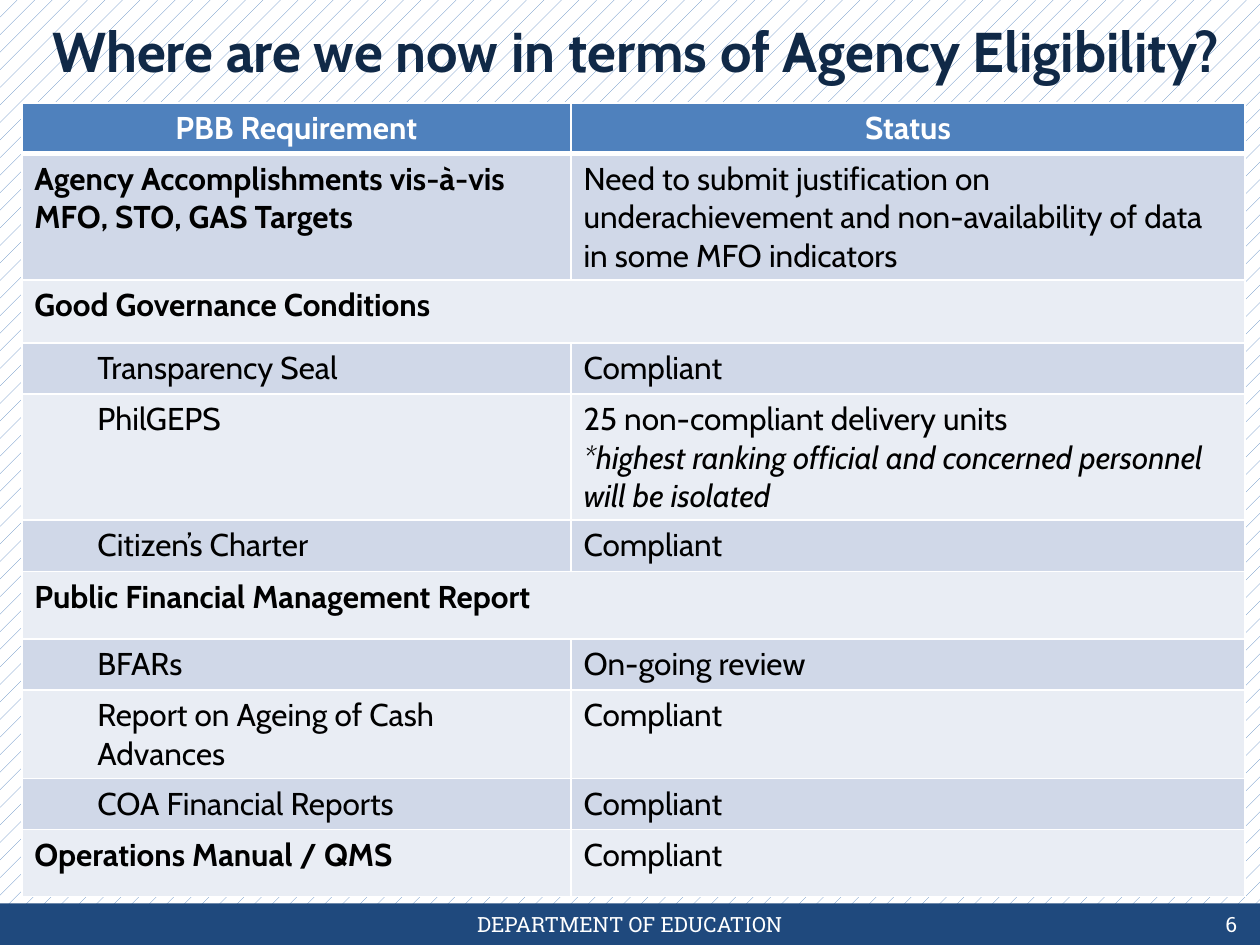
from dataclasses import dataclass

from lxml import etree
from pptx import Presentation
from pptx.dml.color import RGBColor
from pptx.enum.dml import MSO_PATTERN
from pptx.enum.shapes import MSO_SHAPE
from pptx.enum.text import MSO_ANCHOR, PP_ALIGN
from pptx.oxml.ns import qn
from pptx.util import Cm, Pt

LEFT, CENTER, RIGHT = PP_ALIGN.LEFT, PP_ALIGN.CENTER, PP_ALIGN.RIGHT
MIDDLE = MSO_ANCHOR.MIDDLE
RECT = MSO_SHAPE.RECTANGLE
DOTS = MSO_PATTERN.PERCENT_5


@dataclass(frozen=True)
class Theme:
    font: str = "Cabin"
    slab: str = "Roboto Slab"
    navy: str = "102947"
    bar: str = "1F497D"
    head: str = "4F81BD"
    bands: tuple = ("E9EDF4", "D0D8E8")
    white: str = "FFFFFF"
    black: str = "000000"
    title: int = 32
    body: int = 18
    foot: int = 12


THEME = Theme()
WIDTH, HEIGHT = 25.4, 19.05
BAR = 0.84
COLS = (11.07, 13.59)
TALLS = (1.02, 2.54, 1.27, 1.03, 2.54, 1.04, 1.36, 1.03, 1.78, 1.03, 1.35)

HEADS = ("PBB Requirement", "Status")
GROUP, ITEM = "group", "item"
ROWS = (
    (GROUP, "Agency Accomplishments vis-à-vis\nMFO, STO, GAS Targets",
     "Need to submit justification on underachievement and "
     "non-availability of data in some MFO indicators", ""),
    (GROUP, "Good Governance Conditions", "", ""),
    (ITEM, "Transparency Seal", "Compliant", ""),
    (ITEM, "PhilGEPS", "25 non-compliant delivery units\n",
     "*highest ranking official and concerned personnel will be isolated"),
    (ITEM, "Citizen’s Charter", "Compliant", ""),
    (GROUP, "Public Financial Management Report", "", ""),
    (ITEM, "BFARs", "On-going review", ""),
    (ITEM, "Report on Ageing of Cash Advances", "Compliant", ""),
    (ITEM, "COA Financial Reports", "Compliant", ""),
    (GROUP, "Operations Manual / QMS", "Compliant", ""),
)


def rgb(code):
    return RGBColor.from_string(code)


def put(frame, text, size=THEME.body, font=THEME.font, color=THEME.black,
        bold=False, italic=False, align=LEFT, level=0):
    para = frame.paragraphs[0]
    para.alignment = align
    if level:
        para.level = level
        props = para._p.get_or_add_pPr()
        props.set("marL", str(Cm(1.27 * level)))
        props.set("indent", "0")
    for num, line in enumerate(text.split("\n")):
        if num:
            para.add_line_break()
        if line:
            run = para.add_run()
            run.text = line
            run.font.size = Pt(size)
            run.font.name = font
            run.font.bold = bold
            run.font.italic = italic
            run.font.color.rgb = rgb(color)


def paint(cell, color, base=1):
    props = cell._tc.get_or_add_tcPr()
    for side, width in (("L", 1), ("R", 1), ("T", 1), ("B", base)):
        line = etree.SubElement(props, qn(f"a:ln{side}"), w=str(Pt(width)))
        fill = etree.SubElement(line, qn("a:solidFill"))
        etree.SubElement(fill, qn("a:srgbClr"), val=THEME.white)
    cell.fill.solid()
    cell.fill.fore_color.rgb = rgb(color)


def add_back(slide):
    fill = slide.background.fill
    fill.patterned()
    fill.pattern = DOTS
    fill.fore_color.rgb = rgb(THEME.head)
    fill.back_color.rgb = rgb(THEME.white)


def add_title(slide, text):
    title = slide.shapes.title
    title.left, title.top = Cm(0.13), Cm(0.2)
    title.width, title.height = Cm(WIDTH), Cm(1.63)
    title.text_frame.vertical_anchor = MIDDLE
    put(title.text_frame, text, size=THEME.title, color=THEME.navy,
        bold=True, align=CENTER)


def add_bar(slide):
    bar = slide.shapes.add_shape(
        RECT, 0, Cm(HEIGHT - BAR), Cm(WIDTH), Cm(BAR))
    bar.shadow.inherit = False
    bar.fill.solid()
    bar.fill.fore_color.rgb = rgb(THEME.bar)
    bar.line.fill.background()


def add_foot(slide, text, left, width, align):
    box = slide.shapes.add_textbox(
        Cm(left), Cm(HEIGHT - BAR), Cm(width), Cm(BAR))
    frame = box.text_frame
    frame.word_wrap = True
    frame.vertical_anchor = MIDDLE
    put(frame, text, size=THEME.foot, font=THEME.slab, color=THEME.white,
        align=align)


def add_grid(slide):
    table = slide.shapes.add_table(
        len(TALLS), len(COLS), Cm(0.44), Cm(2.08),
        Cm(sum(COLS)), Cm(sum(TALLS))).table
    table.horz_banding = False
    for col, width in zip(table.columns, COLS):
        col.width = Cm(width)
    for row, tall in zip(table.rows, TALLS):
        row.height = Cm(tall)
    for cell, text in zip(table.rows[0].cells, HEADS):
        paint(cell, THEME.head, base=3)
        put(cell.text_frame, text, color=THEME.white, bold=True,
            align=CENTER)
    for num, (kind, name, state, note) in enumerate(ROWS, 1):
        need, status = table.rows[num].cells
        for cell in (need, status):
            paint(cell, THEME.bands[num % 2])
        if not state:
            need.merge(status)
        put(need.text_frame, name, bold=kind == GROUP,
            level=int(kind == ITEM))
        if state:
            put(status.text_frame, state)
        if note:
            put(status.text_frame, note, italic=True)


def main():
    deck = Presentation()
    deck.slide_width, deck.slide_height = Cm(WIDTH), Cm(HEIGHT)
    slide = deck.slides.add_slide(deck.slide_layouts[5])
    add_back(slide)
    add_bar(slide)
    add_foot(slide, "DEPARTMENT OF EDUCATION", 8.68, 8.04, CENTER)
    add_foot(slide, "6", 19.26, 5.93, RIGHT)
    add_grid(slide)
    add_title(slide, "Where are we now in terms of Agency Eligibility?")
    deck.save("out.pptx")


if __name__ == "__main__":
    main()
